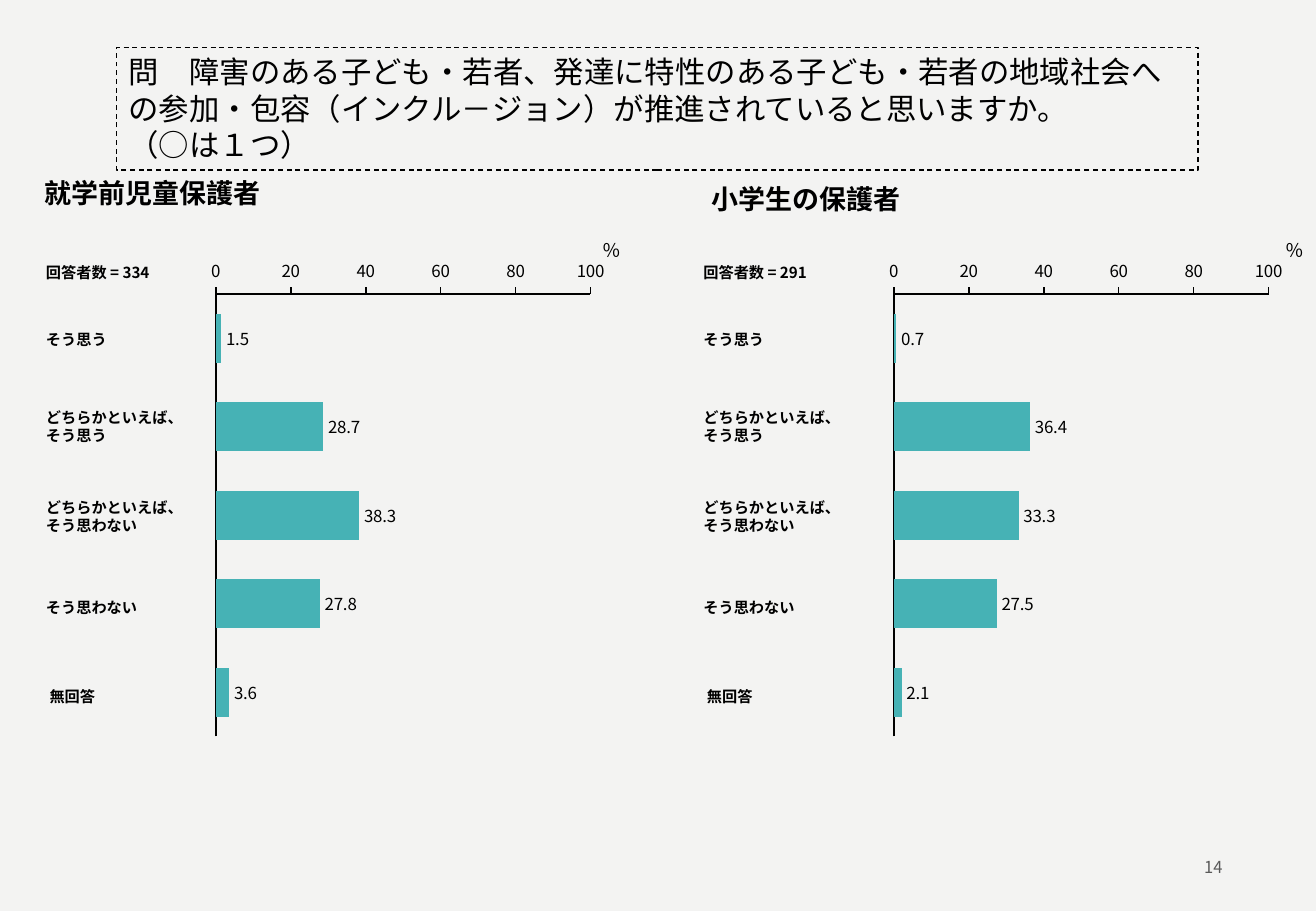
import pptx
import pptx.util
import pptx.chart.data
import pptx.dml.color
import pptx.enum.chart
import pptx.enum.dml
import pptx.enum.text
import pptx.oxml
import pptx.oxml.ns

Inches = pptx.util.Inches
Pt = pptx.util.Pt
RGBColor = pptx.dml.color.RGBColor
XL = pptx.enum.chart

BLACK = RGBColor(0, 0, 0)
GRAY = RGBColor(0x59, 0x59, 0x59)
PAPER = RGBColor(0xF3, 0xF3, 0xF2)
TEAL = RGBColor(0x46, 0xB2, 0xB5)
FONT = "Noto Sans CJK JP"

deck = pptx.Presentation()
deck.slide_width = Inches(10.83)
deck.slide_height = Inches(7.5)
slide = deck.slides.add_slide(deck.slide_layouts[6])
slide.background.fill.solid()
slide.background.fill.fore_color.rgb = PAPER


def add_text(text, left, top, width, height, size=9, bold=False, color=BLACK,
             align=pptx.enum.text.PP_ALIGN.LEFT,
             anchor=pptx.enum.text.MSO_ANCHOR.TOP):
    box = slide.shapes.add_textbox(Inches(left), Inches(top), Inches(width), Inches(height))
    frame = box.text_frame
    frame.word_wrap = True
    frame.vertical_anchor = anchor
    frame.text = text
    for para in frame.paragraphs:
        para.alignment = align
        para.line_spacing = Pt(size * 1.2)
        for run in para.runs:
            run.font.size = Pt(size)
            run.font.bold = bold
            run.font.name = FONT
            run.font.color.rgb = color
            east = pptx.oxml.parse_xml(
                f'<a:ea {pptx.oxml.ns.nsdecls("a")} typeface="{FONT}"/>')
            run.font._element.find(pptx.oxml.ns.qn("a:latin")).addnext(east)
    return box


def add_bars(left, values):
    data = pptx.chart.data.CategoryChartData(number_format="0.0")
    data.categories = ["1", "2", "3", "4", "5"]
    data.add_series("Series 1", values)
    chart = slide.shapes.add_chart(
        XL.XL_CHART_TYPE.BAR_CLUSTERED, Inches(left), Inches(2.13),
        Inches(3.39), Inches(3.94), data).chart
    chart.has_legend = False
    chart.has_title = False
    chart.font.name = "Calibri"
    chart.font.size = Pt(10)
    chart.font.color.rgb = BLACK

    rows = chart.category_axis
    rows.reverse_order = True
    rows.tick_label_position = XL.XL_TICK_LABEL_POSITION.NONE
    rows.major_tick_mark = XL.XL_TICK_MARK.NONE
    scale = chart.value_axis
    scale.minimum_scale = 0
    scale.maximum_scale = 100
    scale.major_unit = 20
    scale.has_major_gridlines = False
    scale.major_tick_mark = XL.XL_TICK_MARK.OUTSIDE
    scale.tick_labels.number_format = "0"
    scale.tick_labels.number_format_is_linked = False
    for axis in (rows, scale):
        axis.format.line.color.rgb = BLACK
        axis.format.line.width = Pt(1)

    plot = chart.plots[0]
    plot.gap_width = 80
    plot.vary_by_categories = False
    fill = plot.series[0].format.fill
    fill.solid()
    fill.fore_color.rgb = TEAL
    plot.has_data_labels = True
    labels = plot.data_labels
    labels.show_value = True
    labels.number_format = "0.0"
    labels.number_format_is_linked = False
    labels.position = XL.XL_LABEL_POSITION.OUTSIDE_END
    for font in (scale.tick_labels.font, labels.font):
        font.name = FONT
        font.size = Pt(10)
        font.color.rgb = BLACK

    area = chart._chartSpace.chart.plotArea
    for old in area.findall(pptx.oxml.ns.qn("c:layout")):
        area.remove(old)
    area.insert(0, pptx.oxml.parse_xml(
        f'<c:layout {pptx.oxml.ns.nsdecls("c")}><c:manualLayout>'
        '<c:layoutTarget val="inner"/><c:xMode val="edge"/><c:yMode val="edge"/>'
        '<c:x val="0.04"/><c:y val="0.06"/><c:w val="0.91"/><c:h val="0.94"/>'
        '</c:manualLayout></c:layout>'))


title = add_text(
    "問　障害のある子ども・若者、発達に特性のある子ども・若者の地域社会への参加・包容"
    "（インクル－ジョン）が推進されていると思いますか。\v（○は１つ）",
    0.96, 0.39, 8.9, 1.01, size=18)
title.line.color.rgb = BLACK
title.line.width = Pt(0.75)
title.line.dash_style = pptx.enum.dml.MSO_LINE.DASH

answers = [
    ("そう思う", 0, 2.67, 0.25),
    ("どちらかといえば、\nそう思う", 0, 3.31, 0.4),
    ("どちらかといえば、\nそう思わない", 0, 4.05, 0.4),
    ("そう思わない", 0, 4.88, 0.25),
    ("無回答", 0.03, 5.61, 0.25),
]
panels = [
    ("就学前児童保護者", 0.27, 1.4, 2.06, 334, 0.28, 1.64, 4.86, (1.5, 28.7, 38.3, 27.8, 3.6)),
    ("小学生の保護者", 5.76, 1.45, 1.77, 291, 5.69, 7.22, 10.48, (0.7, 36.4, 33.3, 27.5, 2.1)),
]
for head, left, top, width, count, side, bars, unit, values in panels:
    add_text(head, left, top, width, 0.38, size=16, bold=True)
    add_text("％", unit, 1.92, 0.56, 0.29, size=11)
    add_bars(bars, values)
    add_text(f"回答者数 = {count}", side, 2.12, 2.76, 0.25, bold=True)
    for label, shift, row, height in answers:
        add_text(label, side + shift, row, 2.76, height, bold=True)

add_text("14", 7.65, 6.98, 2.51, 0.31, size=9.8, color=GRAY,
         align=pptx.enum.text.PP_ALIGN.RIGHT,
         anchor=pptx.enum.text.MSO_ANCHOR.MIDDLE)

deck.save("out.pptx")
